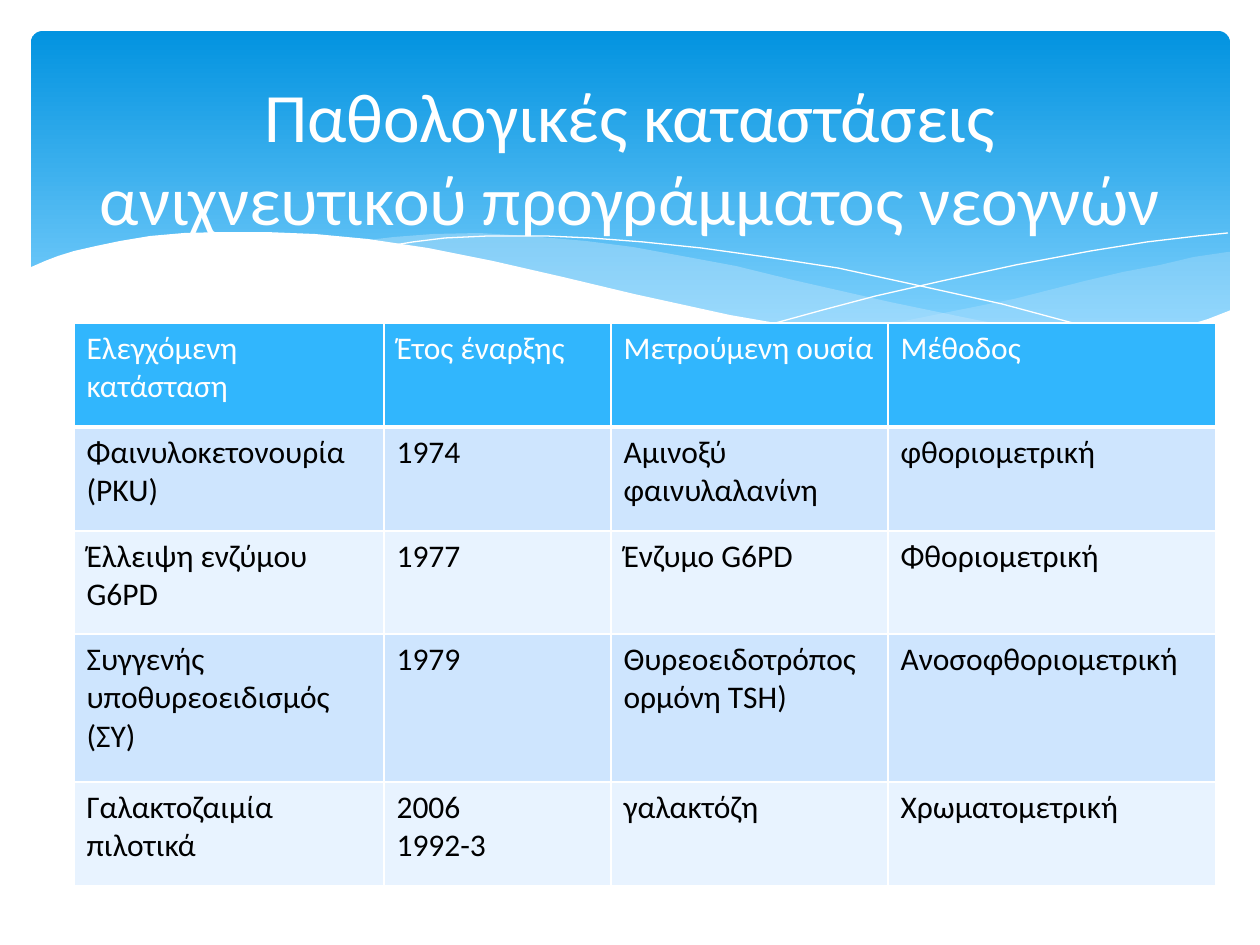
import pptx
import pptx.util
import pptx.dml.color
import pptx.enum.shapes
import pptx.enum.text
import pptx.oxml
import lxml.etree

PX = 914400 / 126
NS = "http://schemas.openxmlformats.org/drawingml/2006/main"


def rgb(value):
    return pptx.dml.color.RGBColor.from_string(value)


def style(p, size, color):
    values = {"name": "Calibri", "size": pptx.util.Pt(size), "bold": False}
    for r in p.runs:
        for key, value in values.items():
            setattr(r.font, key, value)
        r.font.color.rgb = rgb(color)


prs = pptx.Presentation()
prs.slide_width = round(1260 * PX)
prs.slide_height = round(945 * PX)
s = prs.slides.add_slide(prs.slide_layouts[5])

box = [round(v * PX) for v in (31, 31, 1199, 340)]
sp = s.shapes.add_shape(pptx.enum.shapes.MSO_SHAPE.ROUNDED_RECTANGLE, *box)
sp.adjustments[0] = 0.034
sp.shadow.inherit = False
sp.line.fill.background()
sp.fill.gradient()
sp.fill.gradient_angle = 270
for stop, (position, color) in zip(sp.fill.gradient_stops, [(0, "0293E0"), (0.9, "83D3FE")]):
    stop.position = position
    stop.color.rgb = rgb(color)

right_wave = [
    (1228, 252), (1194, 257), (1160, 265), (1123, 272), (1085, 281), (1014, 299),
    (949, 312), (890, 324), (833, 334), (871, 339), (922, 345), (969, 349),
    (1012, 350), (1063, 349), (1099, 345), (1130, 340), (1160, 334), (1187, 326),
    (1213, 318), (1230, 311), (1230, 252)]
middle_wave = [
    (1125, 344), (1055, 334), (977, 320), (890, 302), (793, 280), (736, 266),
    (682, 256), (633, 247), (586, 241), (529, 236), (479, 233), (433, 234),
    (394, 237), (360, 241), (407, 247), (456, 256), (509, 266), (566, 280),
    (668, 302), (757, 321), (819, 333), (876, 340), (927, 347), (989, 350),
    (1043, 350), (1092, 348)]
falling_line = [
    (389, 246), (413, 242), (445, 238), (488, 236), (546, 236), (591, 238),
    (643, 242), (701, 248), (766, 257), (838, 268), (916, 285), (1002, 304),
    (1095, 329), (1143, 343)]
rising_line = [
    (772, 324), (823, 310), (876, 296), (942, 281), (1016, 265), (1091, 251),
    (1147, 242), (1198, 236), (1228, 233)]
white_wave = [
    (1231, 310), (1208, 319), (1172, 330), (1133, 339), (1087, 345), (1019, 349),
    (959, 346), (892, 340), (816, 330), (730, 315), (634, 294), (563, 277),
    (493, 261), (428, 248), (368, 239), (315, 234), (266, 232), (223, 232),
    (184, 233), (150, 236), (120, 241), (96, 246), (74, 251), (58, 256),
    (45, 261), (29, 268), (29, 415), (1231, 415)]

for points, color, alpha in [
    (right_wave, "C6E7FC", 29),
    (middle_wave, "C6E7FC", 40),
    (falling_line, None, 100),
    (rising_line, None, 100),
    (white_wave, "FFFFFF", 100),
]:
    fb = s.shapes.build_freeform(*points[0], scale=PX)
    fb.add_line_segments(points[1:], close=color is not None)
    sp = fb.convert_to_shape()
    sp.shadow.inherit = False
    if color is None:
        sp.fill.background()
        sp.line.color.rgb = rgb("FFFFFF")
        sp.line.width = pptx.util.Pt(0)
        continue
    sp.line.fill.background()
    sp.fill.solid()
    sp.fill.fore_color.rgb = rgb(color)
    if alpha < 100:
        clr = sp.element.spPr.find(f"{{{NS}}}solidFill/{{{NS}}}srgbClr")
        lxml.etree.SubElement(clr, f"{{{NS}}}alpha", val=str(alpha * 1000))

rows = [
    ["Ελεγχόμενη κατάσταση", "Έτος έναρξης", "Μετρούμενη ουσία", "Μέθοδος"],
    ["Φαινυλοκετονουρία (PKU)", "1974", "Αμινοξύ φαινυλαλανίνη", "φθοριομετρική"],
    ["Έλλειψη ενζύμου\nG6PD", "1977", "Ένζυμο G6PD", "Φθοριομετρική"],
    ["Συγγενής υποθυρεοειδισμός (ΣΥ)", "1979", "Θυρεοειδοτρόπος ορμόνη TSH)", "Ανοσοφθοριομετρική"],
    ["Γαλακτοζαιμία\nπιλοτικά", "2006\n1992-3", "γαλακτόζη", "Χρωματομετρική"],
]
widths = [310, 227, 277, 328]
heights = [104, 104, 103, 148, 104]
box = [round(v * PX) for v in (74, 323, sum(widths), sum(heights))]
table = s.shapes.add_table(len(rows), len(widths), *box).table
for column, width in zip(table.columns, widths):
    column.width = round(width * PX)
for row, height in zip(table.rows, heights):
    row.height = round(height * PX)

for i, texts in enumerate(rows):
    fill = "31B6FD" if i == 0 else ("E8F3FF", "CEE5FE")[i % 2]
    for j, text in enumerate(texts):
        cell = table.cell(i, j)
        cell.text = text
        for p in cell.text_frame.paragraphs:
            style(p, 18, "000000" if i else "FFFFFF")
        tcPr = cell._tc.get_or_add_tcPr()
        for side in ("lnL", "lnR", "lnT", "lnB"):
            width = 3 if i == 0 and side == "lnB" else 1
            tcPr.append(pptx.oxml.parse_xml(
                f'<a:{side} xmlns:a="{NS}" w="{width * 12700}"><a:solidFill>'
                f'<a:srgbClr val="FFFFFF"/></a:solidFill></a:{side}>'))
        cell.fill.solid()
        cell.fill.fore_color.rgb = rgb(fill)

title = s.shapes.title
for key, value in {"left": 63, "top": 47, "width": 1134, "height": 218}.items():
    setattr(title, key, round(value * PX))
tf = title.text_frame
tf.text = "Παθολογικές καταστάσεις ανιχνευτικού προγράμματος νεογνών"
for key, value in {
    "word_wrap": True,
    "auto_size": pptx.enum.text.MSO_AUTO_SIZE.NONE,
    "vertical_anchor": pptx.enum.text.MSO_ANCHOR.MIDDLE,
}.items():
    setattr(tf, key, value)
p = tf.paragraphs[0]
p.alignment = pptx.enum.text.PP_ALIGN.CENTER
style(p, 39.6, "FFFFFF")
s.shapes._spTree.append(title.element)

prs.save("out.pptx")
